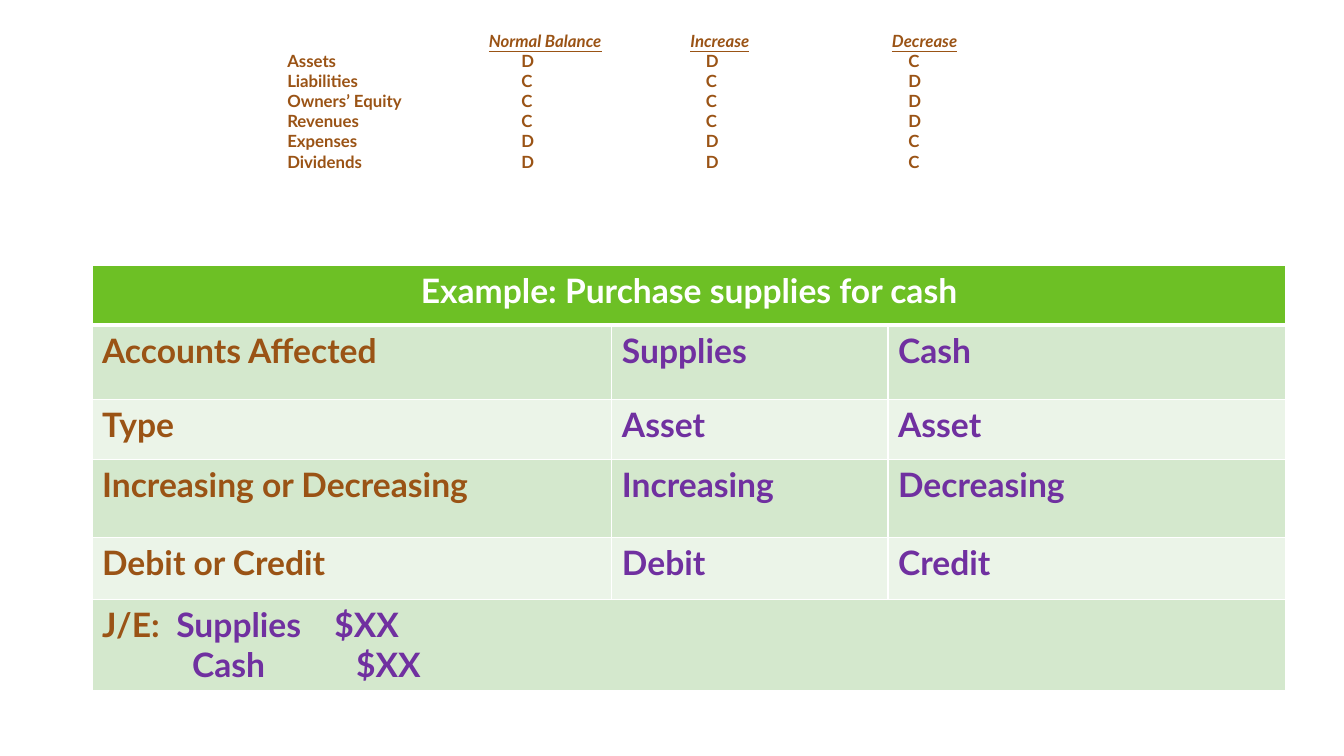
from lxml import etree
from pptx import Presentation
from pptx.dml.color import RGBColor
from pptx.enum import text as t
from pptx.oxml import ns
from pptx.util import Cm, Pt

BROWN, PURPLE, WHITE = "9A5315", "7030A0", "FFFFFF"
GREEN, BANDS = "6DC025", ("D4E8CD", "EBF4E8")

BALANCE_HEADINGS = ("Normal Balance", "Increase", "Decrease")
BALANCES = [
    ("Assets", "D", "D", "C"),
    ("Liabilities", "C", "C", "D"),
    ("Owners’ Equity", "C", "C", "D"),
    ("Revenues", "C", "C", "D"),
    ("Expenses", "D", "D", "C"),
    ("Dividends", "D", "D", "C"),
]
HEADING_TABS = (5.08, 10.16, 15.24)
BALANCE_TABS = (5.9, 10.55, 15.65)

EXAMPLE = "Example: Purchase supplies for cash"
STEPS = [
    ("Accounts Affected", "Supplies", "Cash"),
    ("Type", "Asset", "Asset"),
    ("Increasing or Decreasing", "Increasing", "Decreasing"),
    ("Debit or Credit", "Debit", "Credit"),
]
ENTRY_LABEL = "J/E:"
ENTRY = [("\tSupplies\t$XX", (1.87, 5.85)), ("\tCash\t$XX", (2.27, 6.4))]
COLUMN_WIDTHS = (13.1, 6.96, 10.03)
ROW_HEIGHTS = (1.5, 1.88, 1.5, 1.98, 1.55, 2.3)


def colour(value):
    return RGBColor.from_string(value)


def add_text(paragraph, words, size=24, color=PURPLE, italic=False, underline=False):
    run = paragraph.add_run()
    run.text = words
    font = run.font
    font.name, font.size, font.bold = "Lato", Pt(size), True
    font.italic, font.underline = italic, underline
    font.color.rgb = colour(color)


def set_tabs(paragraph, stops):
    tabs = etree.SubElement(paragraph._p.get_or_add_pPr(), ns.qn("a:tabLst"))
    for stop in stops:
        etree.SubElement(tabs, ns.qn("a:tab"), pos=str(int(Cm(stop))), algn="l")


def paragraph_at(frame, index):
    return frame.add_paragraph() if index else frame.paragraphs[0]


def format_cell(cell, row):
    properties = cell._tc.get_or_add_tcPr()
    widths = {"L": 1, "R": 1, "T": 3 if row == 1 else 1, "B": 1 if row else 3}
    for place, (side, width) in enumerate(widths.items()):
        line = etree.Element(ns.qn("a:ln" + side), w=str(int(Pt(width))))
        fill = etree.SubElement(line, ns.qn("a:solidFill"))
        etree.SubElement(fill, ns.qn("a:srgbClr"), val=WHITE)
        properties.insert(place, line)
    cell.fill.solid()
    cell.fill.fore_color.rgb = colour(BANDS[(row - 1) % 2] if row else GREEN)


def add_balances(slide):
    frame = slide.shapes.add_textbox(Cm(6.99), Cm(0.64), Cm(19.2), Cm(3.84)).text_frame
    frame.word_wrap = True
    headings = frame.paragraphs[0]
    set_tabs(headings, HEADING_TABS)
    for heading in BALANCE_HEADINGS:
        add_text(headings, "\t", size=12, color=BROWN, italic=True)
        add_text(headings, heading, size=12, color=BROWN, italic=True, underline=True)
    for balance in BALANCES:
        line = frame.add_paragraph()
        set_tabs(line, BALANCE_TABS)
        add_text(line, "\t".join(balance), size=12, color=BROWN)


def add_example(slide):
    table = slide.shapes.add_table(
        len(ROW_HEIGHTS), len(COLUMN_WIDTHS), Cm(2.32), Cm(6.69),
        Cm(sum(COLUMN_WIDTHS)), Cm(sum(ROW_HEIGHTS))).table
    table.first_row = table.horz_banding = False
    for column, width in zip(table.columns, COLUMN_WIDTHS):
        column.width = Cm(width)
    for row, height in zip(table.rows, ROW_HEIGHTS):
        row.height = Cm(height)
    last_row, last_column = len(ROW_HEIGHTS) - 1, len(COLUMN_WIDTHS) - 1
    for row in (0, last_row):
        table.cell(row, 0).merge(table.cell(row, last_column))
    for row in range(last_row + 1):
        for column in range(last_column + 1):
            if not table.cell(row, column).is_spanned:
                format_cell(table.cell(row, column), row)

    title = table.cell(0, 0).text_frame.paragraphs[0]
    title.alignment = t.PP_ALIGN.CENTER
    add_text(title, EXAMPLE, color=WHITE)
    for row, step in enumerate(STEPS, 1):
        for column, words in enumerate(step):
            add_text(table.cell(row, column).text_frame.paragraphs[0], words,
                     color=PURPLE if column else BROWN)
    entry_frame = table.cell(last_row, 0).text_frame
    for index, (words, stops) in enumerate(ENTRY):
        line = paragraph_at(entry_frame, index)
        set_tabs(line, stops)
        if index == 0:
            add_text(line, ENTRY_LABEL, color=BROWN)
        add_text(line, words)


def main():
    deck = Presentation()
    deck.slide_width, deck.slide_height = Cm(33.87), Cm(19.05)
    slide = deck.slides.add_slide(deck.slide_layouts[6])
    add_example(slide)
    add_balances(slide)
    deck.save("out.pptx")


if __name__ == "__main__":
    main()
